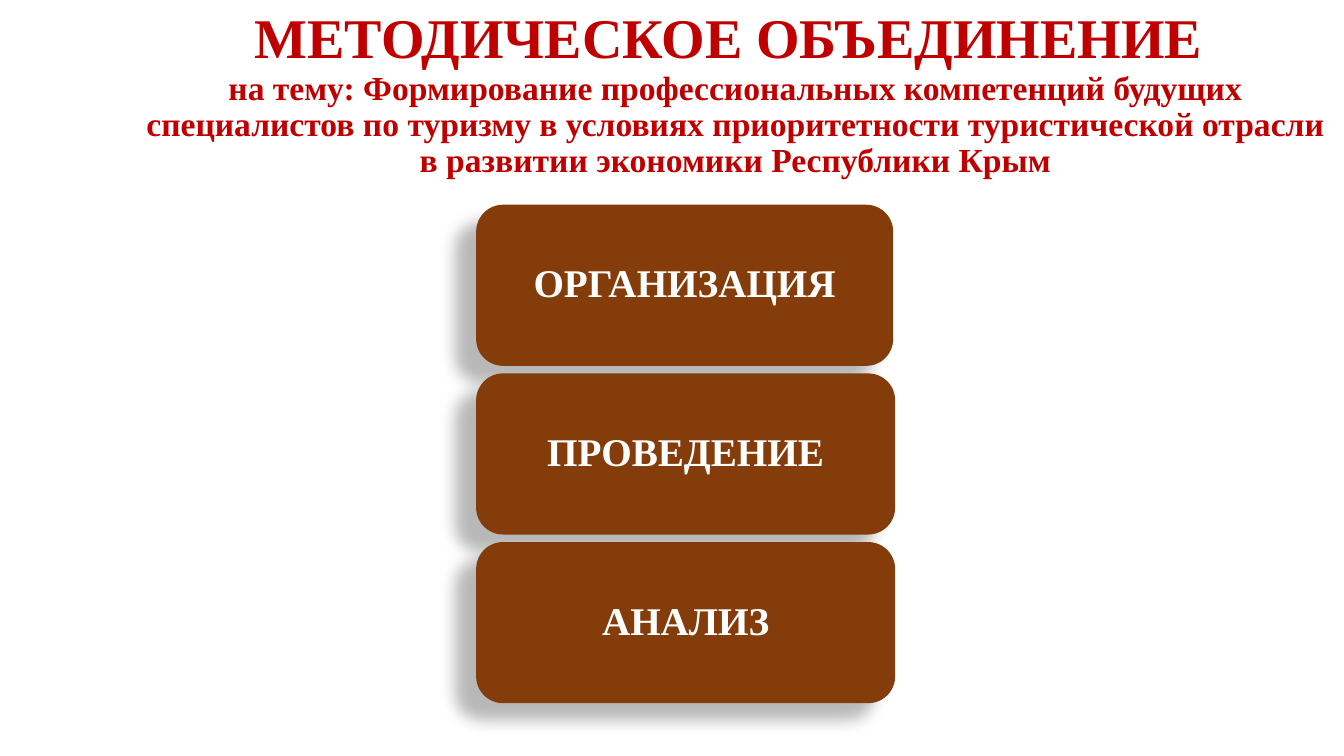
from lxml import etree
from pptx import Presentation, util as u
from pptx.dml.color import RGBColor
from pptx.enum import shapes, text
from pptx.oxml import ns

HEADING = "МЕТОДИЧЕСКОЕ ОБЪЕДИНЕНИЕ "
TOPIC = ("на тему: Формирование профессиональных компетенций будущих "
         "специалистов по туризму в условиях приоритетности туристической "
         "отрасли в развитии экономики Республики Крым")
# stage name, block width in cm
STAGES = [("ОРГАНИЗАЦИЯ", 10.51), ("ПРОВЕДЕНИЕ", 10.56), ("АНАЛИЗ", 10.56)]

COLORS = {"title": "C00000", "block": "843C0B", "label": "FFFFFF", "shadow": "000000"}
FONT = "Times New Roman"
BLOCK_LEFT, BLOCK_TOP, BLOCK_HEIGHT, BLOCK_STEP = 12, 5.16, 4.06, 4.25


def rgb(name):
    return RGBColor.from_string(COLORS[name])


def format_paragraph(para, size, color):
    para.alignment = text.PP_ALIGN.CENTER
    para.line_spacing = 0.9
    para.font.name = FONT
    para.font.size = u.Pt(size)
    para.font.bold = True
    para.font.color.rgb = rgb(color)


def add_soft_shadow(shape):
    """Cast a blurred shadow down and to the left."""
    shape.shadow.inherit = False
    effects = shape._element.spPr.find(ns.qn("a:effectLst"))
    shadow = etree.SubElement(
        effects, ns.qn("a:outerShdw"), blurRad=str(u.Pt(11.8)),
        dist=str(u.Pt(19.7)), dir=str(141 * 60000), algn="tl", rotWithShape="0")
    color = etree.SubElement(shadow, ns.qn("a:srgbClr"), val=COLORS["shadow"])
    etree.SubElement(color, ns.qn("a:alpha"), val="28000")


def add_title(page):
    title = page.shapes.title
    title.left, title.top = u.Cm(3.2), u.Cm(0.81)
    title.width, title.height = u.Cm(30.66), u.Cm(3.18)
    frame = title.text_frame
    frame.word_wrap = True
    frame.auto_size = text.MSO_AUTO_SIZE.NONE
    frame.vertical_anchor = text.MSO_ANCHOR.MIDDLE
    para = frame.paragraphs[0]
    format_paragraph(para, 40, "title")
    para.add_run().text = HEADING
    para.add_line_break()
    topic = para.add_run()
    topic.text = TOPIC
    topic.font.size = u.Pt(24)


def add_stage(page, index, name, width):
    block = page.shapes.add_shape(
        shapes.MSO_SHAPE.ROUNDED_RECTANGLE, u.Cm(BLOCK_LEFT),
        u.Cm(BLOCK_TOP + index * BLOCK_STEP), u.Cm(width), u.Cm(BLOCK_HEIGHT))
    block.fill.solid()
    block.fill.fore_color.rgb = rgb("block")
    block.line.fill.background()
    add_soft_shadow(block)
    frame = block.text_frame
    frame.word_wrap = True
    frame.vertical_anchor = text.MSO_ANCHOR.MIDDLE
    frame.text = name
    format_paragraph(frame.paragraphs[0], 28, "label")


def main():
    deck = Presentation()
    deck.slide_width, deck.slide_height = u.Cm(33.87), u.Cm(19.05)
    page = deck.slides.add_slide(deck.slide_layouts.get_by_name("Title Only"))
    add_title(page)
    for index, (name, width) in enumerate(STAGES):
        add_stage(page, index, name, width)
    deck.save("out.pptx")


if __name__ == "__main__":
    main()
